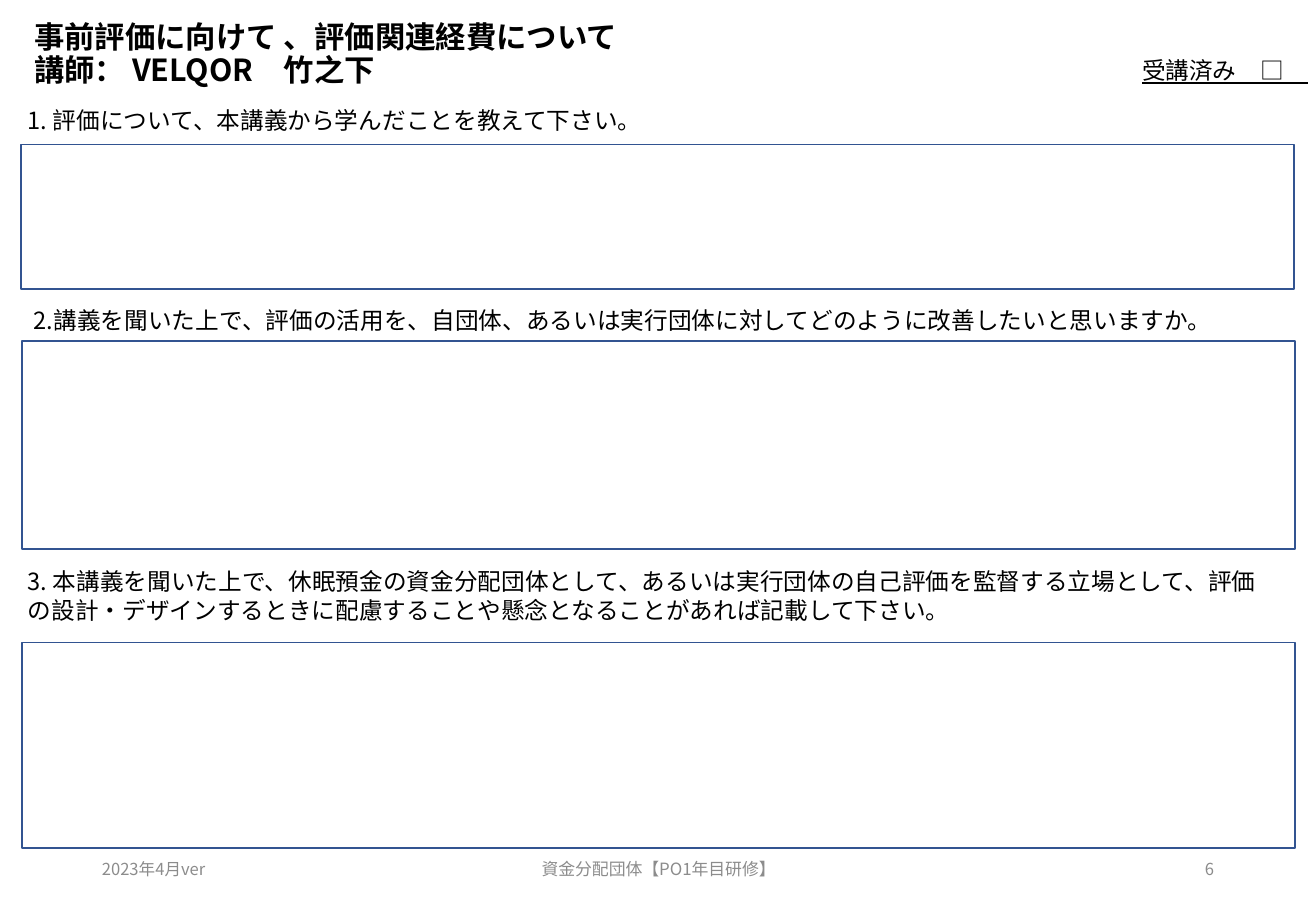
from lxml import etree
from pptx import Presentation
from pptx import util as u
from pptx.dml.color import RGBColor
from pptx.enum import shapes, text
from pptx.oxml.ns import qn


def paint(color_format, value):
    color_format.rgb = RGBColor.from_string(value)


class Worksheet:
    """Holds the style and current slide of a training worksheet."""

    font = "Noto Sans CJK JP"
    ink, grey, paper, border = "000000", "8C8C8C", "FFFFFF", "325491"

    def __init__(self, deck):
        self.slide = deck.slides.add_slide(deck.slide_layouts[5])

    def style(self, para, size, color, bold=False, underline=False):
        font = para.font
        font.name, font.size, font.bold = self.font, u.Pt(size), bold
        font.underline = underline
        paint(font.color, color)
        etree.SubElement(font._element, qn("a:ea"), typeface=self.font)

    def title(self, left, top, width, height, words):
        box = self.slide.shapes.title
        box.left, box.top, box.width, box.height = map(u.Inches, (left, top, width, height))
        frame = box.text_frame
        frame.text = words
        frame.auto_size = text.MSO_AUTO_SIZE.NONE
        frame.vertical_anchor = text.MSO_ANCHOR.MIDDLE
        para = frame.paragraphs[0]
        para.alignment, para.line_spacing = text.PP_ALIGN.LEFT, 0.9
        self.style(para, 18, self.ink, bold=True)

    def label(self, left, top, width, height, words, size=14, color=ink,
              align=text.PP_ALIGN.LEFT, anchor=text.MSO_ANCHOR.TOP, underline=False):
        box = self.slide.shapes.add_textbox(*map(u.Inches, (left, top, width, height)))
        frame = box.text_frame
        frame.word_wrap, frame.vertical_anchor = True, anchor
        para = frame.paragraphs[0]
        para.text, para.alignment = words, align
        self.style(para, size, color, underline=underline)
        return box

    def footer(self, left, width, words, align, size=9.8):
        self.label(left, 6.95, width, 0.4, words, size, self.grey, align,
                   text.MSO_ANCHOR.MIDDLE)

    def answer(self, left, top, height):
        box = self.slide.shapes.add_shape(
            shapes.MSO_SHAPE.RECTANGLE, *map(u.Inches, (left, top, 10.48, height)))
        box.shadow.inherit = False
        box.fill.solid()
        paint(box.fill.fore_color, self.paper)
        paint(box.line.color, self.border)
        box.line.width = u.Pt(1)


def main():
    deck = Presentation()
    deck.slide_width, deck.slide_height = u.Inches(10.83), u.Inches(7.5)
    sheet = Worksheet(deck)
    sheet.title(0.18, -0.04, 9.92, 0.99,
                "事前評価に向けて 、評価関連経費について\v講師： VELQOR\u3000竹之下")

    attended = sheet.label(9.3, 0.41, 1.53, 0.34, "受講済み\u3000□\u3000", underline=True)
    attended.text_frame.margin_right = 0
    attended.text_frame.word_wrap = False

    questions = [
        (0.13, 0.82, 0.34, "1. 評価について、本講義から学んだことを教えて下さい。", 0.17, 1.19, 1.19),
        (0.18, 2.47, 0.34, "2.講義を聞いた上で、評価の活用を、自団体、あるいは実行団体に対して"
         "どのように改善したいと思いますか。", 0.18, 2.81, 1.71),
        (0.13, 4.62, 0.57, "3. 本講義を聞いた上で、休眠預金の資金分配団体として、あるいは実行団体の"
         "自己評価を監督する立場として、評価の設計・デザインするときに配慮することや"
         "懸念となることがあれば記載して下さい。", 0.18, 5.29, 1.69),
    ]
    for left, top, height, words, answer_left, answer_top, answer_height in questions:
        sheet.answer(answer_left, answer_top, answer_height)
        sheet.label(left, top, 10.48, height, words)

    sheet.footer(0.74, 2.44, "2023年4月ver", text.PP_ALIGN.LEFT)
    sheet.footer(3.59, 3.66, "資金分配団体【PO1年目研修】", text.PP_ALIGN.CENTER, 10)
    sheet.footer(7.65, 2.44, "6", text.PP_ALIGN.RIGHT)
    deck.save("out.pptx")


if __name__ == "__main__":
    main()
